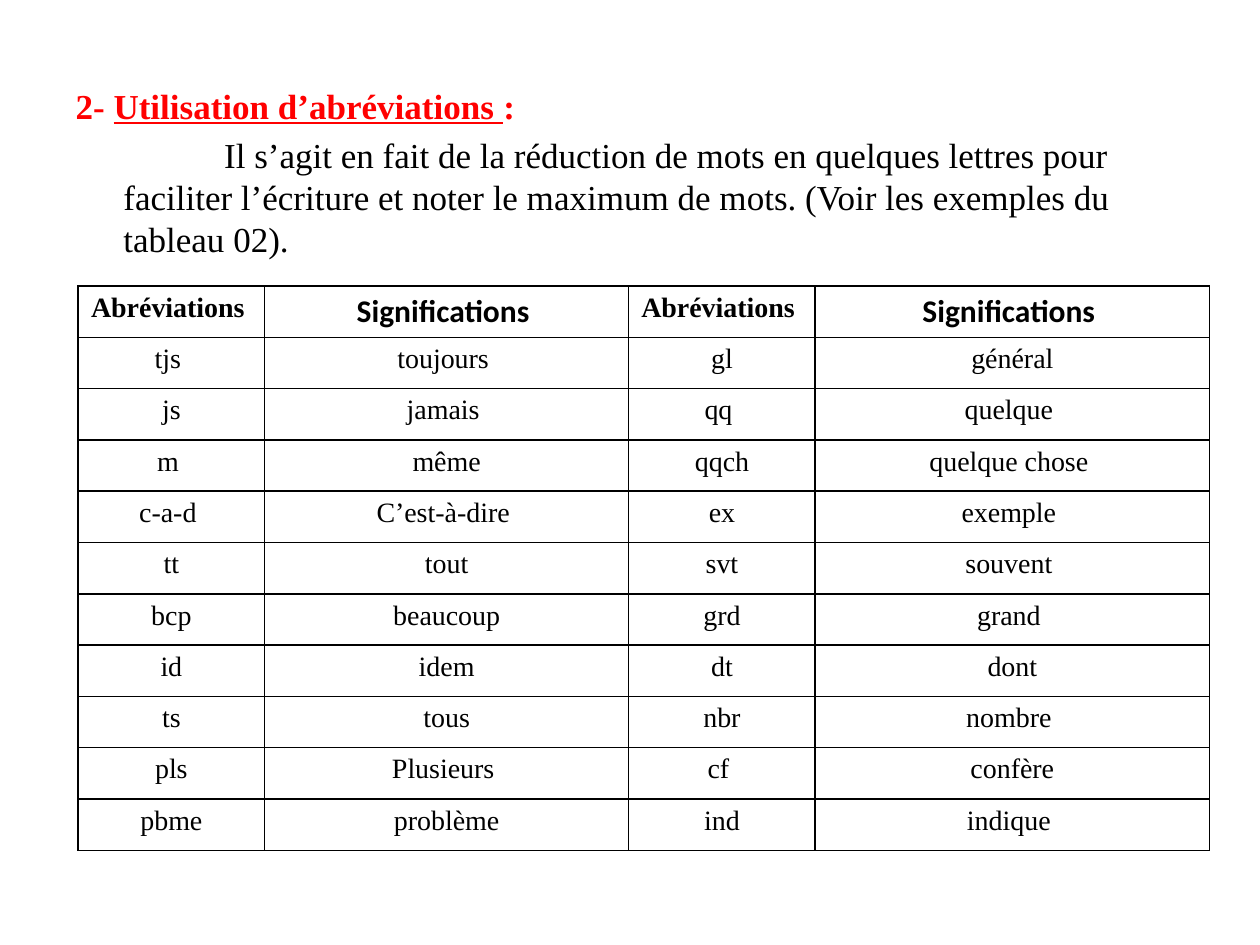
from dataclasses import dataclass

import pptx
import pptx.dml.color
import pptx.enum.text
import pptx.oxml.ns
import pptx.util
from lxml import etree

Inches = pptx.util.Inches
Pt = pptx.util.Pt
CENTER = pptx.enum.text.PP_ALIGN.CENTER
LEFT = pptx.enum.text.PP_ALIGN.LEFT
COLORS = {"ink": "000000", "heading": "FF0000", "paper": "FFFFFF"}
SERIF = "Times New Roman"


@dataclass(frozen=True)
class Style:
    size: float
    name: str = SERIF
    color: str = "ink"
    bold: bool = False


@dataclass(frozen=True)
class Header:
    text: str
    width: float
    style: Style
    align: pptx.enum.text.PP_ALIGN = CENTER


HEADING = Style(20, color="heading", bold=True)
BODY = Style(20)
ENTRY = Style(16)
SHORT = Style(16, bold=True)
MEANING = Style(18, "Calibri", bold=True)

HEADERS = [
    Header("Abréviations ", 1.48, SHORT),
    Header("Significations ", 2.89, MEANING),
    Header("Abréviations", 1.48, SHORT, LEFT),
    Header("Significations ", 3.13, MEANING),
]
ENTRIES = [
    ("tjs ", "toujours ", "gl", "général"),
    ("js", "jamais ", "qq ", "quelque "),
    ("m ", "même", "qqch", "quelque chose "),
    ("c-a-d ", "C’est-à-dire ", "ex", "exemple "),
    ("tt", "tout", "svt", "souvent "),
    ("bcp", "beaucoup", "grd", "grand "),
    ("id", "idem", "dt", "dont"),
    ("ts", "tous", "nbr", "nombre "),
    ("pls", "Plusieurs ", "cf ", "confère"),
    ("pbme", "problème", "ind", "indique "),
]
HEADING_SPANS = [("2- ", False), ("Utilisation d’abréviations ", True), (":", False)]
EXPLANATION = (
    "Il s’agit en fait de la réduction de mots en quelques lettres pour faciliter "
    "l’écriture et noter le maximum de mots. (Voir les exemples du tableau 02)."
)


def rgb(color: str) -> pptx.dml.color.RGBColor:
    return pptx.dml.color.RGBColor.from_string(COLORS[color])


def apply_style(para, style: Style) -> None:
    font = para.font
    font.size, font.name, font.bold = Pt(style.size), style.name, style.bold
    font.color.rgb = rgb(style.color)


def indent(para, margin: float, first_line: float) -> None:
    properties = para._p.get_or_add_pPr()
    properties.set("marL", str(Inches(margin)))
    properties.set("indent", str(Inches(first_line)))


def add_introduction(page) -> None:
    box = page.shapes.add_textbox(Inches(0.6), Inches(0.67), Inches(8.8), Inches(1.4))
    frame = box.text_frame
    frame.word_wrap = True
    frame.margin_left = frame.margin_right = frame.margin_top = frame.margin_bottom = 0
    heading = frame.paragraphs[0]
    for text, underlined in HEADING_SPANS:
        span = heading.add_run()
        span.text = text
        span.font.underline = underlined
    indent(heading, 0.38, -0.38)
    apply_style(heading, HEADING)
    explanation = frame.add_paragraph()
    explanation.text = EXPLANATION
    explanation.space_before = Pt(4)
    indent(explanation, 0.38, 0.8)
    apply_style(explanation, BODY)
    for para in frame.paragraphs:
        para.line_spacing = Pt(24)


def add_borders(cell) -> None:
    properties = cell._tc.get_or_add_tcPr()
    qn = pptx.oxml.ns.qn
    for position, side in enumerate(("a:lnL", "a:lnR", "a:lnT", "a:lnB")):
        line = etree.Element(qn(side), w=str(Pt(1)))
        fill = etree.SubElement(line, qn("a:solidFill"))
        etree.SubElement(fill, qn("a:srgbClr"), val=COLORS["ink"])
        properties.insert(position, line)


def fill_cell(cell, text: str, style: Style, align) -> None:
    cell.fill.solid()
    cell.fill.fore_color.rgb = rgb("paper")
    add_borders(cell)
    para = cell.text_frame.paragraphs[0]
    para.text = text
    para.alignment = align
    apply_style(para, style)


def add_abbreviations(page) -> None:
    row_count = len(ENTRIES) + 1
    width = sum(header.width for header in HEADERS)
    table = page.shapes.add_table(
        row_count, len(HEADERS), Inches(0.62), Inches(2.27), Inches(width), Inches(4.48)
    ).table
    table.first_row = table.horz_banding = False
    for column, header in enumerate(HEADERS):
        table.columns[column].width = Inches(header.width)
        fill_cell(table.cell(0, column), header.text, header.style, header.align)
    for row, entry in enumerate(ENTRIES, start=1):
        for column, text in enumerate(entry):
            fill_cell(table.cell(row, column), text, ENTRY, CENTER)


def main() -> None:
    deck = pptx.Presentation()
    deck.slide_width, deck.slide_height = Inches(10), Inches(7.5)
    page = deck.slides.add_slide(deck.slide_layouts[6])
    add_introduction(page)
    add_abbreviations(page)
    deck.save("out.pptx")


if __name__ == "__main__":
    main()
